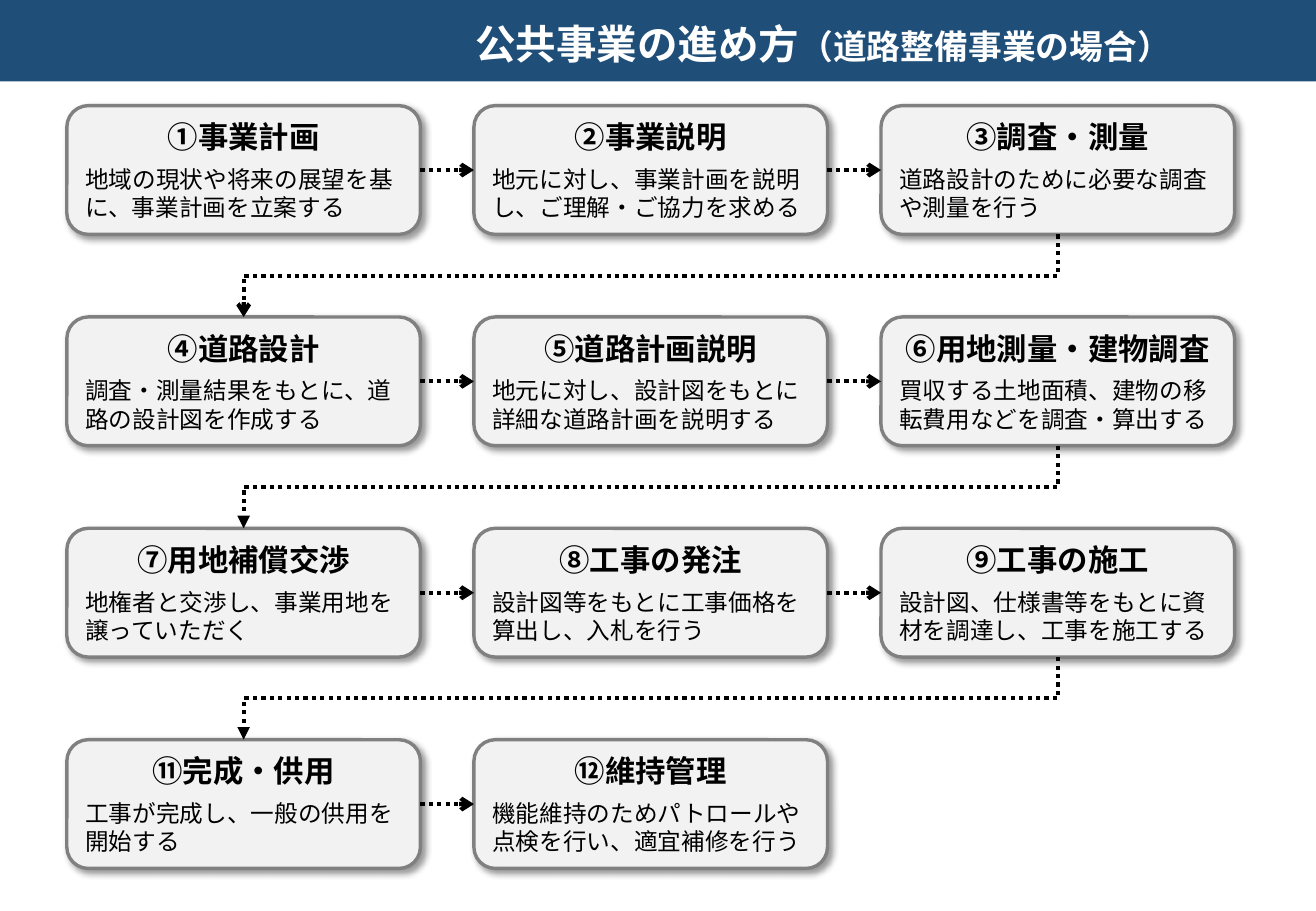
from lxml import etree
from pptx import Presentation
from pptx.dml.color import RGBColor
from pptx.enum.dml import MSO_LINE
from pptx.enum.shapes import MSO_CONNECTOR, MSO_SHAPE
from pptx.enum.text import MSO_ANCHOR, MSO_AUTO_SIZE, PP_ALIGN
from pptx.oxml.ns import qn
from pptx.util import Inches, Pt

TITLE = [("公共事業の進め方", 24), ("（道路整備事業の場合）", 20)]
ROWS = [
    [("①事業計画", "地域の現状や将来の展望を基に、事業計画を立案する"),
     ("②事業説明", "地元に対し、事業計画を説明し、ご理解・ご協力を求める"),
     ("③調査・測量", "道路設計のために必要な調査や測量を行う")],
    [("④道路設計", "調査・測量結果をもとに、道路の設計図を作成する"),
     ("⑤道路計画説明", "地元に対し、設計図をもとに詳細な道路計画を説明する"),
     ("⑥用地測量・建物調査", "買収する土地面積、建物の移転費用などを調査・算出する")],
    [("⑦用地補償交渉", "地権者と交渉し、事業用地を譲っていただく"),
     ("⑧工事の発注", "設計図等をもとに工事価格を算出し、入札を行う"),
     ("⑨工事の施工", "設計図、仕様書等をもとに資材を調達し、工事を施工する")],
    [("⑪完成・供用", "工事が完成し、一般の供用を開始する"),
     ("⑫維持管理", "機能維持のためパトロールや点検を行い、適宜補修を行う")],
]
RETURN_HEADS = ["arrow", "triangle", "triangle"]

FONT = "Noto Sans CJK JP"
NAVY = RGBColor(0x1F, 0x4E, 0x79)
WHITE = RGBColor(0xFF, 0xFF, 0xFF)
BLACK = RGBColor(0, 0, 0)
PALE = RGBColor(0xF2, 0xF2, 0xF2)
GREY = RGBColor(0x80, 0x80, 0x80)
CENTER, LEFT = PP_ALIGN.CENTER, PP_ALIGN.LEFT
MIDDLE = MSO_ANCHOR.MIDDLE
STRAIGHT, ELBOW = MSO_CONNECTOR.STRAIGHT, MSO_CONNECTOR.ELBOW
RIGHT_SIDE, LEFT_SIDE = 3, 1

SLIDE_W, SLIDE_H = 10.83, 7.5
LEFT_X, TOP_Y = 0.55, 0.87
BOX_W, BOX_H = 2.91, 1.06
PITCH_X, PITCH_Y = 3.35, 1.74


def add_text(p, text, size, color=BLACK, bold=False, align=LEFT, before=0):
    p.alignment = align
    p.space_before = Pt(before)
    r = p.add_run()
    r.text = text
    r.font.size = Pt(size)
    r.font.bold = bold
    r.font.color.rgb = color
    r.font.name = FONT
    etree.SubElement(r.font._element, qn("a:ea"), typeface=FONT)


def add_shadow(sp):
    sp.shadow.inherit = False
    effects = sp._element.spPr.find(qn("a:effectLst"))
    shadow = etree.SubElement(effects, qn("a:outerShdw"), blurRad=str(Pt(4)),
                              dist=str(Pt(3)), dir="2700000", algn="tl", rotWithShape="0")
    color = etree.SubElement(shadow, qn("a:srgbClr"), val=str(BLACK))
    etree.SubElement(color, qn("a:alpha"), val="40000")


def add_step(slide, x, y, heading, body):
    sp = slide.shapes.add_shape(MSO_SHAPE.ROUNDED_RECTANGLE, Inches(x), Inches(y),
                                Inches(BOX_W), Inches(BOX_H))
    sp.fill.solid()
    sp.fill.fore_color.rgb = PALE
    sp.line.color.rgb = GREY
    sp.line.width = Pt(2)
    add_shadow(sp)
    tf = sp.text_frame
    tf.word_wrap = True
    tf.auto_size = MSO_AUTO_SIZE.SHAPE_TO_FIT_TEXT
    tf.vertical_anchor = MIDDLE
    add_text(tf.paragraphs[0], heading, 18, bold=True, align=CENTER)
    add_text(tf.add_paragraph(), body, 14, before=6)
    return sp


def add_arrow(slide, kind, x1, y1, x2, y2, head):
    c = slide.shapes.add_connector(kind, Inches(x1), Inches(y1), Inches(x2), Inches(y2))
    c.line.color.rgb = BLACK
    c.line.width = Pt(2.5)
    c.line.dash_style = MSO_LINE.ROUND_DOT
    spPr = c._element.spPr
    etree.SubElement(spPr.find(qn("a:ln")), qn("a:tailEnd"), type=head)
    etree.SubElement(spPr, qn("a:effectLst"))
    return c


def add_return(slide, x1, y1, x2, y2, head):
    cx, cy = (x1 + x2) / 2, (y1 + y2) / 2
    half_w, half_h = (y2 - y1) / 2, (x1 - x2) / 2
    c = add_arrow(slide, ELBOW, cx - half_w, cy - half_h, cx + half_w, cy + half_h, head)
    c._element.spPr.find(qn("a:xfrm")).set("rot", "5400000")


def add_title(slide):
    title = slide.shapes.title
    title.left, title.top = Inches(0), Inches(0)
    title.width, title.height = Inches(SLIDE_W), Inches(0.67)
    title.fill.solid()
    title.fill.fore_color.rgb = NAVY
    tf = title.text_frame
    tf.word_wrap = True
    tf.auto_size = MSO_AUTO_SIZE.NONE
    tf.vertical_anchor = MIDDLE
    tf.margin_left, tf.margin_right = Inches(2.72), Inches(0)
    tf.margin_top, tf.margin_bottom = Inches(0.1), Inches(0.05)
    for text, size in TITLE:
        add_text(tf.paragraphs[0], text, size, color=WHITE, bold=True, align=CENTER)


def main():
    prs = Presentation()
    prs.slide_width, prs.slide_height = Inches(SLIDE_W), Inches(SLIDE_H)
    slide = prs.slides.add_slide(prs.slide_layouts[5])
    add_title(slide)

    for i, row in enumerate(ROWS):
        y = TOP_Y + i * PITCH_Y
        steps = [add_step(slide, LEFT_X + j * PITCH_X, y, *step)
                 for j, step in enumerate(row)]
        for a, b in zip(steps, steps[1:]):
            c = add_arrow(slide, STRAIGHT, 0, 0, 1, 1, "arrow")
            c.begin_connect(a, RIGHT_SIDE)
            c.end_connect(b, LEFT_SIDE)

    first_x = LEFT_X + BOX_W / 2
    last_x = first_x + 2 * PITCH_X
    for i, head in enumerate(RETURN_HEADS):
        y = TOP_Y + i * PITCH_Y
        add_return(slide, last_x, y + BOX_H, first_x, y + PITCH_Y, head)

    prs.save("out.pptx")


if __name__ == "__main__":
    main()
